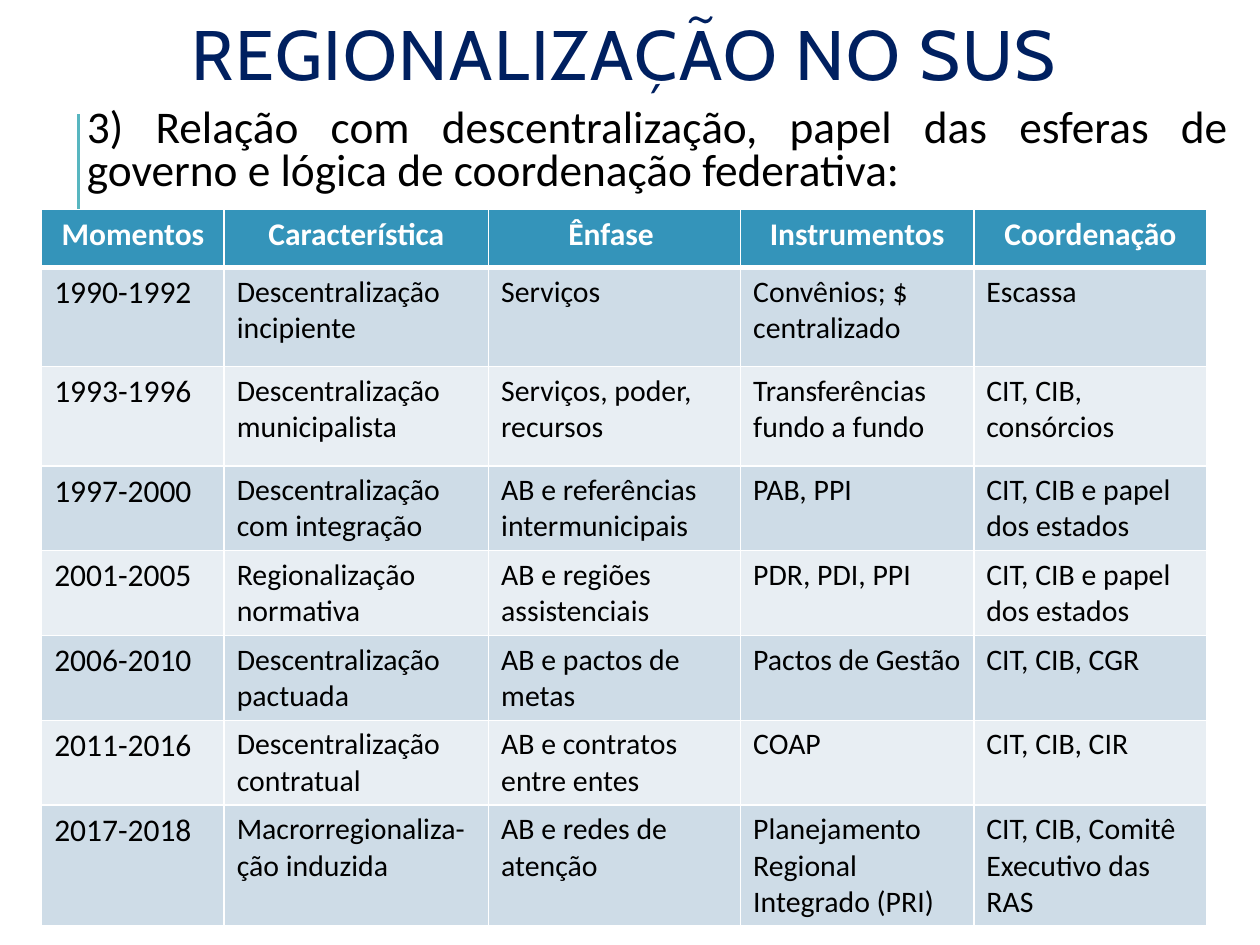
from typing import NamedTuple

from lxml.etree import SubElement
from pptx import Presentation
from pptx.dml.color import RGBColor
from pptx.enum.shapes import MSO_CONNECTOR
from pptx.enum.text import MSO_ANCHOR, MSO_AUTO_SIZE, PP_ALIGN
from pptx.oxml.ns import qn
from pptx.util import Cm, Pt

NAVY = RGBColor(0x00, 0x20, 0x60)
TEAL = RGBColor(0x58, 0xB6, 0xC0)
BLUE = RGBColor(0x34, 0x94, 0xBA)
BAND_DARK = RGBColor(0xCE, 0xDC, 0xE7)
BAND_LIGHT = RGBColor(0xE8, 0xEE, 0xF3)
WHITE = RGBColor(0xFF, 0xFF, 0xFF)
BLACK = RGBColor(0x00, 0x00, 0x00)


class Period(NamedTuple):
    years: str
    feature: str
    emphasis: str
    instruments: str
    coordination: str
    height: float


HEADINGS = ("Momentos", "Característica", "Ênfase ", "Instrumentos", "Coordenação")
HEADING_HEIGHT = 1.17
COLUMN_WIDTHS = (3.68, 5.33, 5.08, 4.7, 4.7)
PERIODS = (
    Period("1990-1992", "Descentralização incipiente", "Serviços",
           "Convênios; $ centralizado", "Escassa", 2),
    Period("1993-1996", "Descentralização municipalista", "Serviços, poder, recursos",
           "Transferências fundo a fundo", "CIT, CIB, consórcios", 2),
    Period("1997-2000", "Descentralização com integração", "AB e referências intermunicipais",
           "PAB, PPI", "CIT, CIB e papel dos estados", 1.71),
    Period("2001-2005", "Regionalização normativa", "AB e regiões assistenciais",
           "PDR, PDI, PPI", "CIT, CIB e papel dos estados", 1.71),
    Period("2006-2010", "Descentralização pactuada", "AB e pactos de metas",
           "Pactos de Gestão", "CIT, CIB, CGR", 1.71),
    Period("2011-2016", "Descentralização contratual", "AB e contratos entre entes",
           "COAP", "CIT, CIB, CIR", 1.71),
    Period("2017-2018", "Macrorregionaliza-ção induzida", "AB e redes de atenção",
           "Planejamento Regional Integrado (PRI)",
           "CIT, CIB, Comitê Executivo das RAS", 2.44),
)


def write(frame, text: str, *, size: float, color=BLACK, font="Calibri", bold=False,
          align=PP_ALIGN.LEFT, line_spacing=1.0):
    """Fill the first paragraph of a text frame and return it."""
    paragraph = frame.paragraphs[0]
    paragraph.alignment = align
    paragraph.line_spacing = line_spacing
    run = paragraph.add_run()
    run.text = text
    run.font.size = Pt(size)
    run.font.name = font
    run.font.bold = bold
    run.font.color.rgb = color
    return paragraph


def set_borders(cell, bottom: float) -> None:
    """Draw white borders; the bottom one has its own width in points."""
    properties = cell._tc.get_or_add_tcPr()
    sides = (("a:lnL", 1), ("a:lnR", 1), ("a:lnT", 1), ("a:lnB", bottom))
    for position, (side, width) in enumerate(sides):
        line = SubElement(properties, qn(side), w=str(Pt(width)))
        SubElement(SubElement(line, qn("a:solidFill")), qn("a:srgbClr"), val=str(WHITE))
        properties.insert(position, line)


def add_cell(cell, text: str, fill: RGBColor, *, bottom: float = 1, **text_format) -> None:
    cell.fill.solid()
    cell.fill.fore_color.rgb = fill
    set_borders(cell, bottom)
    write(cell.text_frame, text, **text_format)


def add_title(slide) -> None:
    title = slide.shapes.title
    title.left, title.top, title.width, title.height = Cm(0.56), Cm(0.08), Cm(24.05), Cm(2.29)
    frame = title.text_frame
    frame.auto_size = MSO_AUTO_SIZE.NONE
    frame.vertical_anchor = MSO_ANCHOR.MIDDLE
    heading = write(frame, "REGIONALIZAÇÃO NO SUS", size=40, color=NAVY, font="Cabin",
                    align=PP_ALIGN.CENTER, line_spacing=0.8)
    heading.runs[0].font._element.set("spc", "100")


def add_accent_line(slide) -> None:
    accent = slide.shapes.add_connector(MSO_CONNECTOR.STRAIGHT,
                                        Cm(1.58), Cm(4.83), Cm(1.58), Cm(2.29))
    accent.line.color.rgb = TEAL
    accent.line.width = Pt(1.5)
    SubElement(accent._element.spPr, qn("a:effectLst"))


def add_topic(slide) -> None:
    frame = slide.shapes.add_textbox(Cm(1.37), Cm(2.06), Cm(23.52), Cm(2.18)).text_frame
    frame.word_wrap = True
    frame.margin_left = frame.margin_right = Cm(0.13)
    frame.margin_top = frame.margin_bottom = Cm(0.13)
    topic = write(frame, "3) Relação com descentralização, papel das esferas de governo "
                  "e lógica de coordenação federativa: ",
                  size=25.9, align=PP_ALIGN.JUSTIFY, line_spacing=0.8)
    topic.space_before, topic.space_after = Pt(12), Pt(2)
    topic._p.get_or_add_pPr().set("marL", str(Cm(0.25)))


def add_periods_table(slide) -> None:
    heights = [HEADING_HEIGHT] + [period.height for period in PERIODS]
    table = slide.shapes.add_table(len(heights), len(HEADINGS), Cm(0.84), Cm(4.22),
                                   Cm(sum(COLUMN_WIDTHS)), Cm(sum(heights))).table
    for column, width in zip(table.columns, COLUMN_WIDTHS):
        column.width = Cm(width)
    for row, height in zip(table.rows, heights):
        row.height = Cm(height)
    for col, heading in enumerate(HEADINGS):
        add_cell(table.cell(0, col), heading, BLUE, bottom=3, size=18, color=WHITE,
                 bold=True, align=PP_ALIGN.CENTER)
    for row, period in enumerate(PERIODS, start=1):
        band = BAND_DARK if row % 2 else BAND_LIGHT
        for col, text in enumerate(period[:len(HEADINGS)]):
            add_cell(table.cell(row, col), text, band, size=17 if col else 18)


def main() -> None:
    deck = Presentation()
    deck.slide_width, deck.slide_height = Cm(25.4), Cm(19.05)
    slide = deck.slides.add_slide(deck.slide_layouts.get_by_name("Title Only"))
    add_accent_line(slide)
    add_title(slide)
    add_topic(slide)
    add_periods_table(slide)
    deck.save("out.pptx")


if __name__ == "__main__":
    main()
